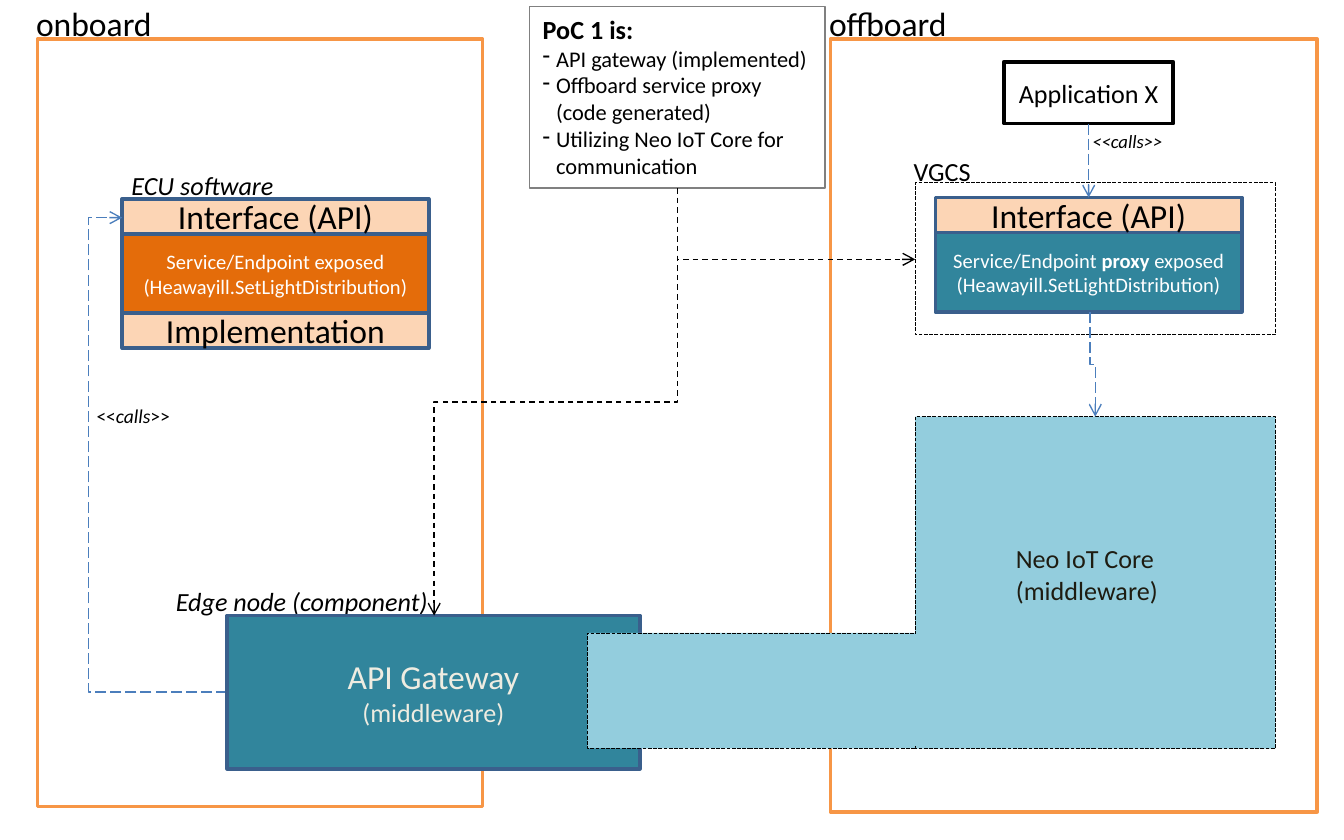
"""Build the PoC 1 onboard/offboard architecture slide."""
from lxml import etree
from pptx import Presentation
from pptx.dml.color import RGBColor
from pptx.enum import dml, shapes, text
from pptx.oxml.ns import qn
from pptx.util import Inches, Pt

BLACK = RGBColor(0, 0, 0)
WHITE = RGBColor(0xFF, 0xFF, 0xFF)
GREY = RGBColor(0x80, 0x80, 0x80)
FRAME = RGBColor(0xF7, 0x96, 0x46)
ORANGE = RGBColor(0xE4, 0x6C, 0x0A)
PEACH = RGBColor(0xFC, 0xD5, 0xB5)
TEAL = RGBColor(0x31, 0x85, 0x9C)
AQUA = RGBColor(0x93, 0xCD, 0xDD)
NAVY = RGBColor(0x3A, 0x5F, 0x8C)
BLUE = RGBColor(0x4B, 0x7E, 0xBC)
CREAM = RGBColor(0xEE, 0xEC, 0xE1)
DARK = RGBColor(0x1E, 0x1C, 0x11)

DASH = dml.MSO_LINE.DASH
LONG_DASH = dml.MSO_LINE.LONG_DASH
RECT = shapes.MSO_SHAPE.RECTANGLE
PROCESS = shapes.MSO_SHAPE.FLOWCHART_PROCESS
CENTER = text.PP_ALIGN.CENTER
LEFT = text.PP_ALIGN.LEFT


def write(tf, lines, color=BLACK, align=LEFT):
    """Write (size, *runs) lines; a run is a string or a (string, style) pair."""
    for i, (size, *runs) in enumerate(lines):
        p = tf.paragraphs[0] if i == 0 else tf.add_paragraph()
        p.alignment = align
        for run in runs:
            words, style = (run, None) if isinstance(run, str) else run
            r = p.add_run()
            r.text = words
            r.font.name, r.font.size = "Calibri", Pt(size)
            r.font.color.rgb = color
            if style:
                setattr(r.font, style, True)


def add_box(sl, at, fill=None, line=None, width=2, dash=None, kind=PROCESS):
    """Add a flat box with an optional fill and outline."""
    sp = sl.shapes.add_shape(kind, *map(Inches, at))
    sp.shadow.inherit = False
    if fill is None:
        sp.fill.background()
    else:
        sp.fill.solid()
        sp.fill.fore_color.rgb = fill
    if line is None:
        sp.line.fill.background()
    else:
        sp.line.color.rgb = line
        sp.line.width = Pt(width)
        sp.line.dash_style = dash
    return sp


def add_block(sl, at, lines, fill, color=BLACK, line=NAVY, kind=PROCESS):
    """Add a box with centred text."""
    sp = add_box(sl, at, fill, line, kind=kind)
    sp.text_frame.word_wrap = True
    sp.text_frame.vertical_anchor = text.MSO_ANCHOR.MIDDLE
    write(sp.text_frame, lines, color, CENTER)


def add_dashed(sl, at, fill=None):
    """Add a box with a thin dashed outline."""
    return add_box(sl, at, fill, BLACK, 0.25, LONG_DASH, RECT)


def add_label(sl, at, size, *runs):
    """Add a one-line text box."""
    tb = sl.shapes.add_textbox(*map(Inches, at))
    tb.text_frame.word_wrap = False
    write(tb.text_frame, [(size, *runs)])


def add_service(sl, x, y, lines, fill, bars):
    """Add a service block with peach bars above and below it."""
    w, bar_h, body_h = 2.28, 0.26, 0.59
    add_block(sl, (x, y + bar_h, w, body_h), lines, fill, WHITE)
    for name, top in zip(bars, (y, y + bar_h + body_h)):
        add_block(sl, (x, top, w, bar_h), [(18, name)], PEACH)


def add_arrow(sl, start, end, color, dash, kind="bentConnector3",
              vertical=False, adj=None):
    """Add a dashed arrow; a vertical elbow leaves its start downwards."""
    (x1, y1), (x2, y2) = start, end
    if vertical:
        cx, cy = (x1 + x2) / 2, (y1 + y2) / 2
        w, h = abs(y2 - y1), abs(x2 - x1)
        x1, y1, x2, y2 = cx - w / 2, cy - h / 2, cx + w / 2, cy + h / 2
    c = sl.shapes.add_connector(shapes.MSO_CONNECTOR.ELBOW,
                                *map(Inches, (x1, y1, x2, y2)))
    pr = c._element.spPr
    if vertical:
        right = end[0] > start[0]
        xfrm = pr.find(qn("a:xfrm"))
        xfrm.set("rot", str((270 if right else 90) * 60000))
        if right:
            xfrm.set("flipH", "1")
    geom = pr.find(qn("a:prstGeom"))
    geom.set("prst", kind)
    if adj is not None:
        etree.SubElement(geom.find(qn("a:avLst")), qn("a:gd"),
                         name="adj1", fmla=f"val {round(adj * 100000)}")
    c.line.color.rgb = color
    c.line.width = Pt(0.75)
    c.line.dash_style = dash
    etree.SubElement(pr.find(qn("a:ln")), qn("a:tailEnd"), type="arrow")
    etree.SubElement(pr, qn("a:effectLst"))


def add_bullet(p):
    """Give a paragraph a hanging dash bullet."""
    pr = p._p.get_or_add_pPr()
    pr.set("marL", str(Inches(0.1)))
    pr.set("indent", str(-Inches(0.1)))
    etree.SubElement(pr, qn("a:buFontTx"))
    etree.SubElement(pr, qn("a:buChar"), char="-")


def add_note(sl):
    """Add the summary box with its bulleted list."""
    sp = add_box(sl, (3.94, 0.05, 2.2, 1.35), None, GREY, 0.75, kind=RECT)
    tf = sp.text_frame
    tf.word_wrap = True
    tf.vertical_anchor = text.MSO_ANCHOR.TOP
    write(tf, [(14, ("PoC 1 is:", "bold")),
               (12, "API gateway (implemented)"),
               (12, "Offboard service proxy (code generated)"),
               (12, "Utilizing Neo IoT Core for communication")])
    for p in tf.paragraphs[1:]:
        add_bullet(p)


def add_core(sl):
    """Add the cloud middleware area and its caption."""
    add_dashed(sl, (6.81, 3.1, 2.68, 2.47), AQUA)
    sp = add_box(sl, (7.46, 3.99, 1.32, 0.57), AQUA, kind=RECT)
    sp.text_frame.word_wrap = False
    sp.text_frame.vertical_anchor = text.MSO_ANCHOR.TOP
    write(sp.text_frame, [(14, "Neo IoT Core"), (14, "(middleware)")], DARK)


def main():
    """Draw the slide and save it."""
    prs = Presentation()
    prs.slide_width, prs.slide_height = Inches(10), Inches(6.25)
    sl = prs.slides.add_slide(prs.slide_layouts[6])
    endpoint = (11, "(Heawayill.SetLightDistribution)")

    add_box(sl, (0.28, 0.29, 3.31, 5.71), line=FRAME)
    add_box(sl, (6.18, 0.29, 3.62, 5.75), line=FRAME)
    add_label(sl, (0.17, -0.03, 1.07, 0.4), 18, "onboard")
    add_label(sl, (6.07, -0.03, 1.09, 0.4), 18, "offboard")
    add_service(sl, 0.91, 1.48, [(11, "Service/Endpoint exposed"), endpoint],
                ORANGE, ["Interface (API)", "Implementation"])
    add_service(sl, 6.96, 1.47,
                [(11, "Service/Endpoint ", ("proxy", "bold"), " exposed"), endpoint],
                TEAL, ["Interface (API)"])
    add_arrow(sl, (1.69, 5.15), (0.91, 1.62), BLUE, LONG_DASH, adj=1.32)
    add_label(sl, (0.62, 2.96, 0.76, 0.28), 10.5, "<<", ("calls", "italic"), ">>")
    add_label(sl, (1.21, 4.31, 2.09, 0.34), 14, ("Edge node (component)", "italic"))
    add_block(sl, (7.47, 0.46, 1.26, 0.46), [(14, "Application X")],
              WHITE, line=BLACK, kind=RECT)
    add_arrow(sl, (8.1, 0.92), (8.1, 1.47), BLUE, LONG_DASH, "straightConnector1")
    add_label(sl, (8.03, 0.92, 0.76, 0.28), 10, ("<<calls>>", "italic"))
    add_dashed(sl, (6.81, 1.36, 2.68, 1.13))
    add_core(sl)
    add_label(sl, (6.7, 1.11, 0.63, 0.34), 14, "VGCS")
    add_block(sl, (1.69, 4.58, 3.07, 1.14),
              [(18, "API Gateway"), (14, "(middleware)")], TEAL, CREAM)
    add_label(sl, (0.88, 1.21, 1.27, 0.34), 14, ("ECU software", "italic"))
    add_dashed(sl, (4.37, 4.71, 2.44, 0.86), AQUA)
    add_box(sl, (6.8, 4.73, 0.05, 0.81), AQUA, AQUA, kind=RECT)
    add_note(sl)
    add_arrow(sl, (5.04, 1.4), (3.23, 4.58), BLACK, DASH, vertical=True)
    add_arrow(sl, (5.04, 1.4), (6.81, 1.93), BLACK, DASH, "bentConnector2", True)
    add_arrow(sl, (8.11, 2.32), (8.15, 3.1), BLUE, LONG_DASH, vertical=True)
    prs.save("out.pptx")


if __name__ == "__main__":
    main()
